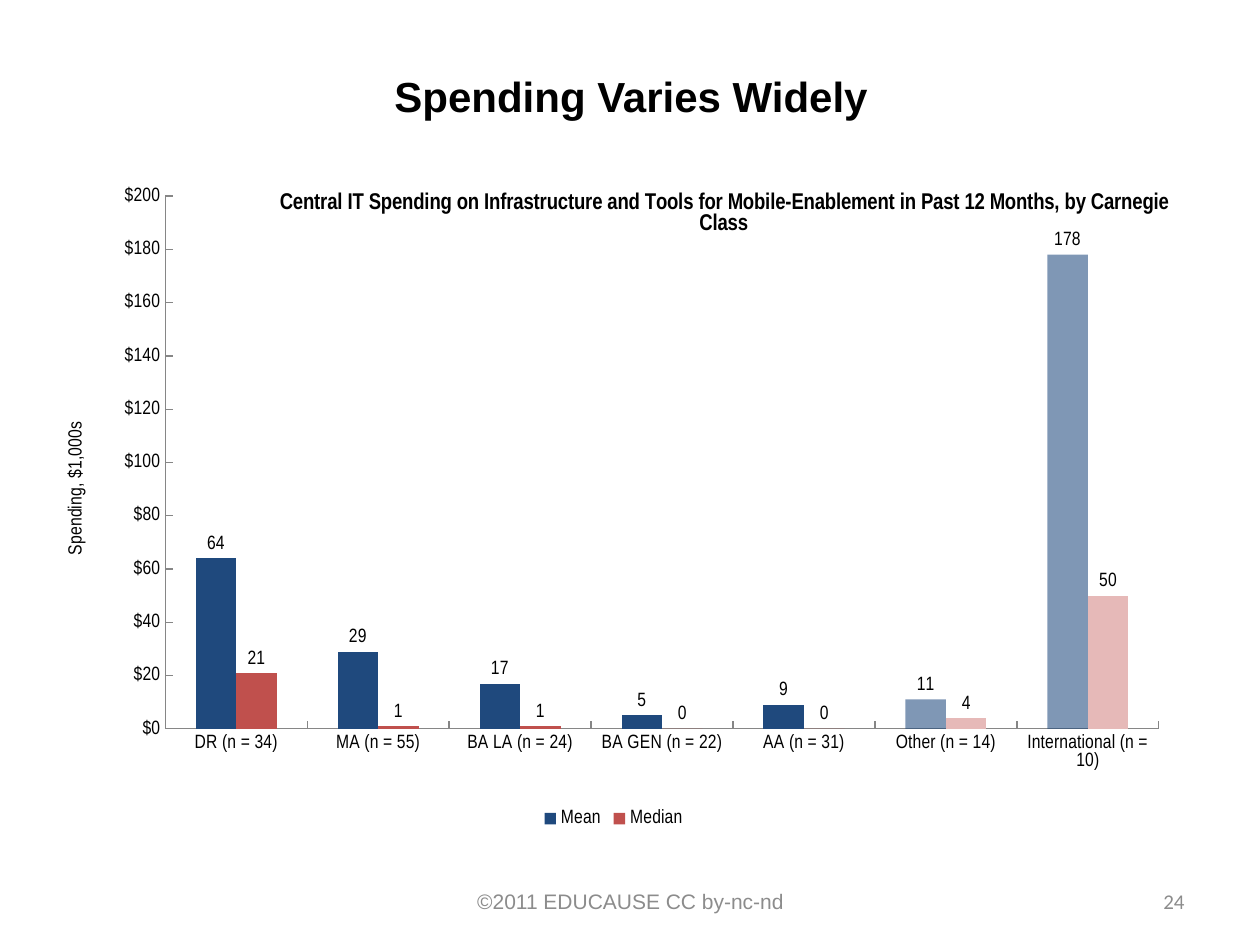
import pptx
import pptx.chart.data
import pptx.dml.color
import pptx.enum.chart
import pptx.enum.text
import pptx.oxml
import pptx.oxml.ns
import pptx.util

RGB = pptx.dml.color.RGBColor
BLACK = RGB(0x00, 0x00, 0x00)
GREY = RGB(0x8C, 0x8C, 0x8C)
AXIS_GREY = RGB(0x86, 0x86, 0x86)
NAVY = RGB(0x1F, 0x49, 0x7D)
RED = RGB(0xC0, 0x50, 0x4D)
PINK = RGB(0xE6, 0xB9, 0xB8)

CATEGORIES = ["DR (n = 34)", "MA (n = 55)", "BA LA (n = 24)", "BA GEN (n = 22)",
              "AA (n = 31)", "Other (n = 14)", "International (n = 10)"]
# name, values, main colour, muted colour, muted opacity in percent
SERIES = [("Mean", [64, 29, 17, 5, 9, 11, 178], NAVY, NAVY, 57),
          ("Median", [21, 1, 1, 0, 0, 4, 50], RED, PINK, 100)]
MUTED_POINTS = (5, 6)
CHART_TITLE = ("Central IT Spending on Infrastructure and Tools for "
               "Mobile-Enablement in Past 12 Months, by Carnegie Class")


def inches(box):
    return [pptx.util.Inches(v) for v in box]


def set_font(font, size, name, color, bold=False):
    font.size = pptx.util.Pt(size)
    font.name = name
    font.bold = bold
    font.color.rgb = color


def add_text(slide, box, text, align, size, name, color, bold=False):
    tf = slide.shapes.add_textbox(*inches(box)).text_frame
    tf.word_wrap = True
    tf.vertical_anchor = pptx.enum.text.MSO_ANCHOR.MIDDLE
    p = tf.paragraphs[0]
    p.alignment = align
    r = p.add_run()
    r.text = text
    set_font(r.font, size, name, color, bold)


def set_layout(parent, before, inner=False, **shares):
    """Fix the place of a chart part as shares of the chart's size."""
    target = '<c:layoutTarget val="inner"/>' if inner else ""
    modes = "".join(f'<c:{k}Mode val="edge"/>' for k in "xy")
    values = "".join(f'<c:{k} val="{v}"/>' for k, v in shares.items())
    for old in parent.findall(pptx.oxml.ns.qn("c:layout")):
        parent.remove(old)
    layout = pptx.oxml.parse_xml(
        f'<c:layout {pptx.oxml.ns.nsdecls("c")}><c:manualLayout>'
        f'{target}{modes}{values}</c:manualLayout></c:layout>')
    parent.insert(before, layout)


def set_chart_title(title, text, size, bold, x, y):
    r = title.text_frame.paragraphs[0].add_run()
    r.text = text
    set_font(r.font, size, "Arial Narrow", BLACK, bold)
    set_layout(title._element, 1, x=x, y=y)


def style_axis(axis):
    axis.has_major_gridlines = False
    axis.major_tick_mark = pptx.enum.chart.XL_TICK_MARK.INSIDE
    axis.minor_tick_mark = pptx.enum.chart.XL_TICK_MARK.NONE
    axis.format.line.color.rgb = AXIS_GREY
    axis.format.line.width = pptx.util.Pt(0.75)


def style_series(ser, color, muted, opacity):
    ser.invert_if_negative = False
    ser.format.fill.solid()
    ser.format.fill.fore_color.rgb = color
    for i in MUTED_POINTS:
        point = ser.points[i]
        point.format.fill.solid()
        point.format.fill.fore_color.rgb = muted
        if opacity < 100:
            clr = next(point.format.fill._xPr.iter(pptx.oxml.ns.qn("a:srgbClr")))
            clr.append(pptx.oxml.parse_xml(
                f'<a:alpha {pptx.oxml.ns.nsdecls("a")} val="{opacity * 1000}"/>'))
    labels = ser.data_labels
    labels.show_value = True
    labels.position = pptx.enum.chart.XL_LABEL_POSITION.OUTSIDE_END
    labels.number_format = "#,##0"
    labels.number_format_is_linked = False


def add_spending_chart(slide, box):
    data = pptx.chart.data.CategoryChartData()
    data.categories = CATEGORIES
    for name, values, *_ in SERIES:
        data.add_series(name, values)
    chart = slide.shapes.add_chart(
        pptx.enum.chart.XL_CHART_TYPE.COLUMN_CLUSTERED, *inches(box), data).chart
    set_font(chart.font, 11, "Arial Narrow", BLACK)

    # Columns
    plot = chart.plots[0]
    plot.gap_width = 150
    plot.overlap = 0
    plot.vary_by_categories = False
    for ser, (_, _, *colors) in zip(plot.series, SERIES):
        style_series(ser, *colors)

    # Axes
    style_axis(chart.category_axis)
    val = chart.value_axis
    style_axis(val)
    val.minimum_scale, val.maximum_scale, val.major_unit = 0, 200, 20
    val.tick_labels.number_format = '"$"#,##0'
    val.tick_labels.number_format_is_linked = False
    set_chart_title(val.axis_title, "Spending, $1,000s", 11, False, 0.01, 0.44)

    # Title, legend and plot area
    set_chart_title(chart.chart_title, CHART_TITLE, 13, True, 0.2, 0.13)
    chart.has_legend = True
    chart.legend.position = pptx.enum.chart.XL_LEGEND_POSITION.BOTTOM
    chart.legend.include_in_layout = False
    area = chart._chartSpace.chart.plotArea
    set_layout(area, 0, inner=True, x=0.102, y=0.142, w=0.882, h=0.718)


def add_footer(slide, top, height):
    align = pptx.enum.text.PP_ALIGN
    add_text(slide, (3.42, top, 3.17, height), "©2011 EDUCAUSE CC by-nc-nd",
             align.CENTER, 12, "Arial", GREY)
    add_text(slide, (7.17, top, 2.33, height), "24", align.RIGHT, 12, "Calibri", GREY)


def main():
    prs = pptx.Presentation()
    prs.slide_width, prs.slide_height = inches((10, 7.5))
    slide = prs.slides.add_slide(prs.slide_layouts[6])
    add_text(slide, (0.51, 0.4, 9, 0.72), "Spending Varies Widely",
             pptx.enum.text.PP_ALIGN.CENTER, 24, "Arial", BLACK, True)
    add_spending_chart(slide, (0.4, 0.72, 9, 5.89))
    add_footer(slide, 6.95, 0.4)
    prs.save("out.pptx")


if __name__ == "__main__":
    main()
